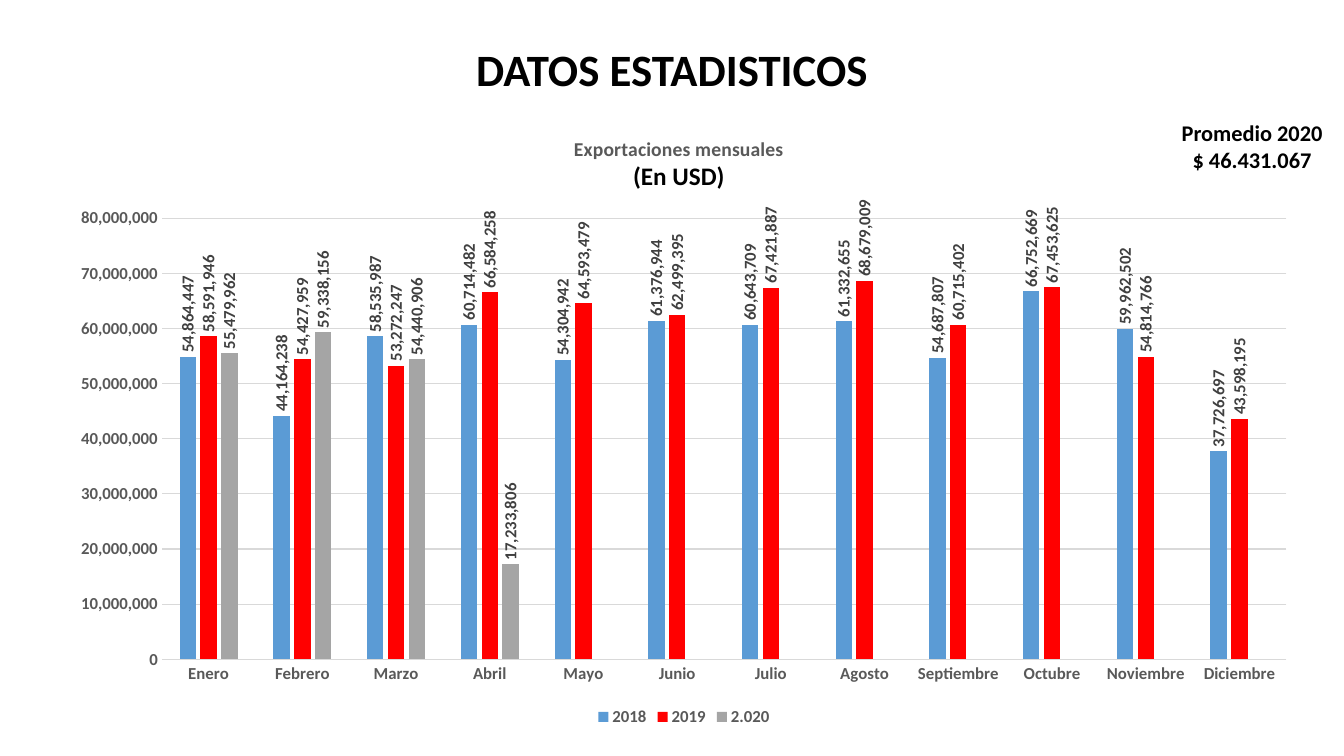
from dataclasses import dataclass

from lxml import etree
from pptx import Presentation
from pptx import util as u
from pptx.chart.data import CategoryChartData
from pptx.dml.color import RGBColor
from pptx.enum import chart as ch, text
from pptx.oxml import parse_xml
from pptx.oxml.ns import nsdecls, qn


@dataclass(frozen=True)
class Theme:
    font: str = "Calibri"
    black: str = "000000"
    axis: str = "595959"
    label: str = "404040"
    grid: str = "D9D9D9"
    bars: tuple = ("5B9BD5", "FF0000", "A5A5A5")
    title: int = 32
    unit: int = 18
    average: int = 16
    chart_title: int = 14
    chart_text: int = 12


T = Theme()
NUMBERS = "#,##0"

MONTHS = ("Enero", "Febrero", "Marzo", "Abril", "Mayo", "Junio", "Julio",
          "Agosto", "Septiembre", "Octubre", "Noviembre", "Diciembre")
EXPORTS = {
    "2018": (54864447, 44164238, 58535987, 60714482, 54304942, 61376944,
             60643709, 61332655, 54687807, 66752669, 59962502, 37726697),
    "2019": (58591946, 54427959, 53272247, 66584258, 64593479, 62499395,
             67421887, 68679009, 60715402, 67453625, 54814766, 43598195),
    "2.020": (55479962, 59338156, 54440906, 17233806) + (None,) * 8,
}


def set_all(obj, values):
    for name, value in values.items():
        setattr(obj, name, value)


def style_font(font, size, color):
    set_all(font, {"name": T.font, "size": u.Pt(size), "bold": True})
    font.color.rgb = RGBColor.from_string(color)


def style_line(line, color):
    line.color.rgb = RGBColor.from_string(color)
    line.width = u.Pt(0.75)


def write_lines(tf, lines, spacing=None):
    """Fill a text frame with centred (text, size, colour) lines."""
    for i, (words, size, color) in enumerate(lines):
        p = tf.paragraphs[0] if i == 0 else tf.add_paragraph()
        p.alignment = text.PP_ALIGN.CENTER
        if spacing:
            p.line_spacing = spacing
        r = p.add_run()
        r.text = words
        style_font(r.font, size, color)


def place_in_chart(element, index, **fractions):
    """Give a chart part a fixed place, in fractions of the chart."""
    for old in element.findall(qn("c:layout")):
        element.remove(old)
    layout = parse_xml(f"<c:layout {nsdecls('c')}><c:manualLayout/></c:layout>")
    values = {"xMode": "edge", "yMode": "edge", **fractions}
    if "w" in fractions:
        values = {"layoutTarget": "inner", **values}
    for name, value in values.items():
        etree.SubElement(layout[0], qn(f"c:{name}")).set("val", str(value))
    element.insert(index, layout)


def add_text(slide, box, lines, anchor, wrap, spacing=None):
    tf = slide.shapes.add_textbox(*box).text_frame
    set_all(tf, {"word_wrap": wrap, "vertical_anchor": anchor})
    write_lines(tf, lines, spacing)


def style_axes(chart):
    for axis in (chart.category_axis, chart.value_axis):
        set_all(axis, {"major_tick_mark": ch.XL_TICK_MARK.NONE,
                       "minor_tick_mark": ch.XL_TICK_MARK.NONE})
        style_font(axis.tick_labels.font, T.chart_text, T.axis)
    style_line(chart.category_axis.format.line, T.grid)
    axis = chart.value_axis
    set_all(axis, {"minimum_scale": 0, "maximum_scale": 80000000,
                   "major_unit": 10000000, "has_major_gridlines": True})
    axis.format.line.fill.background()
    style_line(axis.major_gridlines.format.line, T.grid)
    set_all(axis.tick_labels, {"number_format": NUMBERS,
                               "number_format_is_linked": False})


def style_bars(plot):
    set_all(plot, {"gap_width": 219, "overlap": -27,
                   "vary_by_categories": False})
    for series, color in zip(plot.series, T.bars):
        series.format.fill.solid()
        series.format.fill.fore_color.rgb = RGBColor.from_string(color)
        labels = series.data_labels
        set_all(labels, {"show_value": True, "number_format": NUMBERS,
                         "number_format_is_linked": False,
                         "position": ch.XL_LABEL_POSITION.OUTSIDE_END})
        style_font(labels.font, T.chart_text, T.label)
        # Turn the values upright
        body = labels._element.find(qn("c:txPr")).find(qn("a:bodyPr"))
        set_all_xml = {"rot": "-5400000", "vert": "horz"}
        for name, value in set_all_xml.items():
            body.set(name, value)


def add_exports_chart(slide, box):
    data = CategoryChartData(number_format=NUMBERS)
    data.categories = MONTHS
    for year, values in EXPORTS.items():
        data.add_series(year, values)
    chart = slide.shapes.add_chart(
        ch.XL_CHART_TYPE.COLUMN_CLUSTERED, *box, data).chart
    style_font(chart.font, T.chart_text, T.axis)

    # Chart title
    chart.has_title = True
    title = chart.chart_title
    write_lines(title.text_frame, [
        ("Exportaciones mensuales", T.chart_title, T.axis),
        ("(En USD)", T.unit, T.black)])
    place_in_chart(title._element, 1, x=0.41, y=0.03)

    # Axes, bars and legend
    style_axes(chart)
    style_bars(chart.plots[0])
    chart.has_legend = True
    set_all(chart.legend, {"position": ch.XL_LEGEND_POSITION.BOTTOM,
                           "include_in_layout": False})
    style_font(chart.legend.font, T.chart_text, T.axis)
    plot_area = chart.plots[0]._element.getparent()
    place_in_chart(plot_area, 0, x=0.084, y=0.169, w=0.896, h=0.715)


def add_statistics_slide(prs, left, top, width, height):
    slide = prs.slides.add_slide(prs.slide_layouts[6])
    # Monthly exports
    add_exports_chart(slide, (left + u.Cm(1.42), top + u.Cm(2.87),
                              width - u.Cm(2.24), height - u.Cm(3.5)))
    # Heading
    margin = u.Cm(2.33)
    add_text(slide, (left + margin, top, width - 2 * margin, u.Cm(3.65)),
             [("DATOS ESTADISTICOS", T.title, T.black)],
             text.MSO_ANCHOR.MIDDLE, True, 0.9)
    # Average of the year
    add_text(slide, (left + width - u.Cm(4.37), top + u.Cm(2.87),
                     u.Cm(4.11), u.Cm(3.68)),
             [("Promedio 2020", T.average, T.black),
              ("$ 46.431.067", T.average, T.black)],
             text.MSO_ANCHOR.TOP, False)


def main():
    prs = Presentation()
    set_all(prs, {"slide_width": u.Cm(33.87), "slide_height": u.Cm(19.05)})
    add_statistics_slide(prs, 0, 0, prs.slide_width, prs.slide_height)
    prs.save("out.pptx")


if __name__ == "__main__":
    main()
